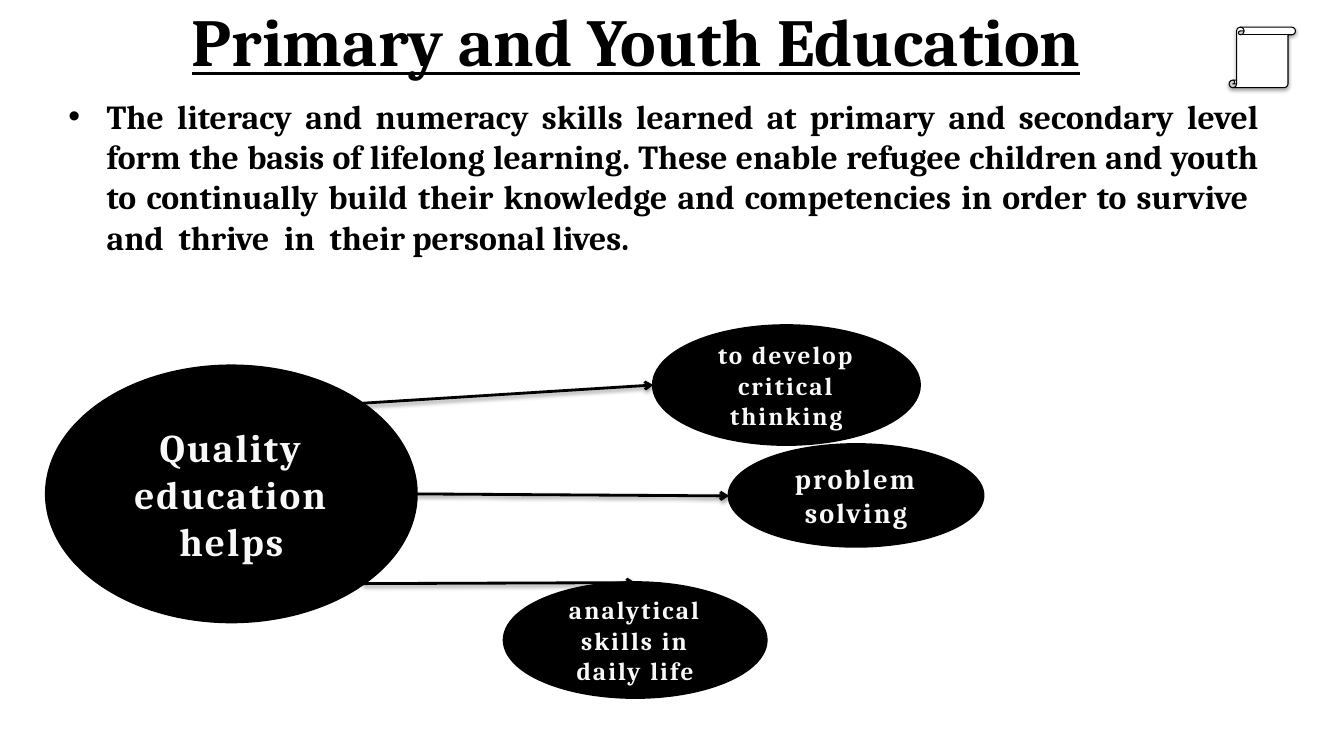
from lxml.etree import SubElement
from pptx import Presentation
from pptx.dml.color import RGBColor
from pptx.enum.shapes import MSO_CONNECTOR, MSO_SHAPE
from pptx.enum.text import MSO_ANCHOR, PP_ALIGN
from pptx.oxml.ns import qn
from pptx.util import Inches, Pt

COLORS = {"ink": "000000", "paper": "FFFFFF", "light": "F8F8F8"}
FONT = "Cambria"

# Ellipses: text, left, top, width, height, font size
BUBBLES = [
    ("Quality education helps", 0.46, 3.63, 3.67, 2.54, 28),
    ("to develop critical thinking", 6.48, 3.23, 2.64, 1.18, 18),
    ("problem solving", 7.23, 4.41, 2.52, 1.01, 20),
    ("analytical skills in daily life", 5, 5.78, 2.6, 1.14, 18),
]
# Arrows: begin x, begin y, end x, end y
ARROWS = [
    (3.6, 4, 6.48, 3.82),
    (4.13, 4.9, 7.23, 4.92),
    (3.6, 5.79, 6.3, 5.78),
]


def color(name):
    return RGBColor.from_string(COLORS[name])


def set_font(paragraph, size, color_name, alignment):
    paragraph.alignment = alignment
    font = paragraph.font
    font.name = FONT
    font.size = Pt(size)
    font.bold = True
    font.color.rgb = color(color_name)


def set_line(shape, width):
    shape.line.color.rgb = color("ink")
    shape.line.width = Pt(width)


def add_shadow(properties):
    effects = properties.find(qn("a:effectLst"))
    if effects is None:
        effects = SubElement(properties, qn("a:effectLst"))
    shadow = SubElement(effects, qn("a:outerShdw"), blurRad=str(Pt(3.1)),
                        dist=str(Pt(1.6)), dir="5400000", rotWithShape="0")
    shade = SubElement(shadow, qn("a:srgbClr"), val=COLORS["ink"])
    SubElement(shade, qn("a:alpha"), val="38000")


def add_text(slide, text, left, top, width, height, size, alignment):
    box = slide.shapes.add_textbox(Inches(left), Inches(top), Inches(width), Inches(height))
    box.text_frame.word_wrap = True
    paragraph = box.text_frame.paragraphs[0]
    paragraph.text = text
    set_font(paragraph, size, "ink", alignment)
    return box


def add_bullet(paragraph, indent):
    properties = paragraph._p.get_or_add_pPr()
    properties.set("marL", str(Inches(indent)))
    properties.set("indent", str(Inches(-indent)))
    bullet_font = SubElement(properties, qn("a:buFont"), typeface="Arial")
    bullet_font.addnext(properties.makeelement(qn("a:buChar"), {"char": "•"}))
    # Default run properties come after the bullet
    properties.append(properties.find(qn("a:defRPr")))


def add_filled_shape(slide, kind, left, top, width, height, fill, line_width):
    shape = slide.shapes.add_shape(kind, Inches(left), Inches(top), Inches(width), Inches(height))
    shape.shadow.inherit = False
    shape.fill.solid()
    shape.fill.fore_color.rgb = color(fill)
    set_line(shape, line_width)
    return shape


def add_bubble(slide, text, left, top, width, height, size):
    shape = add_filled_shape(slide, MSO_SHAPE.OVAL, left, top, width, height, "ink", 2)
    frame = shape.text_frame
    frame.word_wrap = True
    frame.vertical_anchor = MSO_ANCHOR.MIDDLE
    paragraph = frame.paragraphs[0]
    paragraph.text = text
    set_font(paragraph, size, "light", PP_ALIGN.CENTER)
    # Letter spacing of 1.5 points
    paragraph.runs[0]._r.get_or_add_rPr().set("spc", "150")


def add_arrow(slide, *ends):
    connector = slide.shapes.add_connector(MSO_CONNECTOR.STRAIGHT, *map(Inches, ends))
    set_line(connector, 2)
    SubElement(connector.line._get_or_add_ln(), qn("a:tailEnd"), type="arrow")
    add_shadow(connector._element.spPr)


def main():
    presentation = Presentation()
    presentation.slide_width = Inches(13.33)
    presentation.slide_height = Inches(7.5)
    slide = presentation.slides.add_slide(presentation.slide_layouts[6])

    # Title
    title = add_text(slide, "Primary and Youth Education", 0.85, 0, 10.92, 0.79, 48,
                     PP_ALIGN.CENTER)
    title.text_frame.vertical_anchor = MSO_ANCHOR.MIDDLE
    title.text_frame.paragraphs[0].font.underline = True

    # Body
    body = add_text(
        slide,
        "The literacy and numeracy skills learned at primary and secondary level form "
        "the basis of lifelong learning. These enable refugee children and youth to "
        "continually build their knowledge and competencies in order to survive  and  "
        "thrive  in  their personal lives.",
        0.58, 0.9, 12, 1.8, 24, PP_ALIGN.JUSTIFY)
    add_bullet(body.text_frame.paragraphs[0], 0.38)

    # Diagram
    for arrow in ARROWS:
        add_arrow(slide, *arrow)
    for bubble in BUBBLES:
        add_bubble(slide, *bubble)

    # Scroll in the corner
    scroll = add_filled_shape(slide, MSO_SHAPE.VERTICAL_SCROLL, 12.19, 0.27, 0.66, 0.6,
                              "paper", 0.75)
    add_shadow(scroll._element.spPr)

    presentation.save("out.pptx")


if __name__ == "__main__":
    main()
